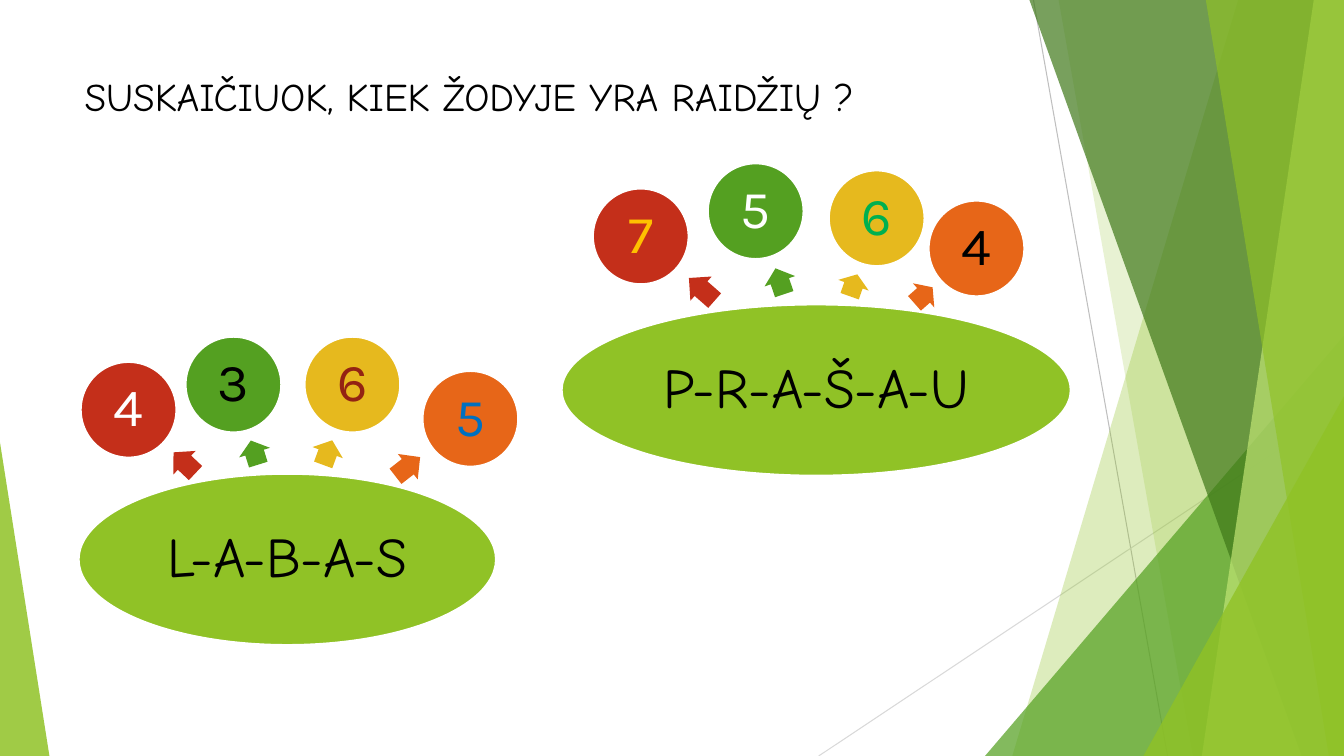
from lxml import etree
from pptx import Presentation
from pptx.dml.color import RGBColor
from pptx.enum import shapes, text
from pptx.oxml.ns import qn
from pptx.util import Inches, Pt

THEME = {
    "lime": "90C226", "green": "54A021", "dark": "3F7819", "pale": "C0E474",
    "yellow": "E6B91E", "orange": "E76618", "red": "C42F1A",
    "white": "FFFFFF", "black": "000000", "gold": "FFC000", "emerald": "00B050",
    "maroon": "932313", "blue": "0070C0", "gray": "BFBFBF", "silver": "D9D9D9",
    "title": 28, "word": 40, "number": 38,
    "hand": "Comic Neue", "digit": "Karla",
}
W, H = 13.33, 7.5


def paint(sp, color, opacity=100, outlined=False):
    sp.shadow.inherit = False
    sp.fill.solid()
    sp.fill.fore_color.rgb = RGBColor.from_string(THEME[color])
    if opacity < 100:
        clr = sp.fill._xPr.find(qn("a:solidFill"))[0]
        etree.SubElement(clr, qn("a:alpha"), val=str(opacity * 1000))
    if outlined:
        sp.line.color.rgb = RGBColor.from_string(THEME["white"])
        sp.line.width = Pt(1.5)
    else:
        sp.line.fill.background()


def write(sp, words, size, font, color, inset):
    tf = sp.text_frame
    tf.word_wrap = True
    tf.vertical_anchor = text.MSO_ANCHOR.MIDDLE
    tf.margin_left = tf.margin_right = tf.margin_top = tf.margin_bottom = Inches(inset)
    tf.text = words
    p = tf.paragraphs[0]
    p.alignment = text.PP_ALIGN.CENTER
    p.line_spacing = 0.9
    r = p.runs[0]
    r.font.size = Pt(THEME[size])
    r.font.name = THEME[font]
    r.font.color.rgb = RGBColor.from_string(THEME[color])


prs = Presentation()
prs.slide_width, prs.slide_height = Inches(W), Inches(H)
s = prs.slides.add_slide(prs.slide_layouts[6])

# Backdrop: thin lines
backdrop = s.shapes.add_group_shape().shapes
for x1, y1, x2, y2, color in [(10.25, 0, 11.58, H, "gray"), (W, 4.03, 8.12, H, "silver")]:
    line = backdrop.add_connector(shapes.MSO_CONNECTOR.STRAIGHT,
                                  Inches(x1), Inches(y1), Inches(x2), Inches(y2))
    line.line.color.rgb = RGBColor.from_string(THEME[color])
    line.line.width = Pt(0.75)
    etree.SubElement(line._element.spPr, qn("a:effectLst"))

# Backdrop: bands (top x, bottom x) run to the right edge,
# triangles (left, top, width, apex) stand on the bottom edge
facets = [
    ((12.28, 10.04), "lime", 30),
    ((10.5, 11.83), "lime", 20),
    ((9.77, 3.33, 3.56, 1), "green", 72),
    ((10.21, 12.91), "dark", 70),
    ((13.03, 11.92), "pale", 70),
    ((11.96, 13.18), "lime", 65),
    ((11.34, 3.93, 1.99, 1), "lime", 80),
    ((0, 4.39, 0.49, 0), "lime", 85),
]
for geometry, color, opacity in facets:
    if len(geometry) == 2:
        top_x, bottom_x = geometry
        outline = backdrop.build_freeform(Inches(top_x), Inches(0))
        corners = [(W, 0), (W, H), (bottom_x, H)]
        outline.add_line_segments([(Inches(x), Inches(y)) for x, y in corners])
        sp = outline.convert_to_shape()
    else:
        left, top, width, apex = geometry
        sp = backdrop.add_shape(shapes.MSO_SHAPE.ISOSCELES_TRIANGLE, Inches(left), Inches(top),
                                Inches(width), Inches(H - top))
        sp.adjustments[0] = apex
    paint(sp, color, opacity)

# Title
title = s.shapes.add_textbox(Inches(0.74), Inches(0.67), Inches(9.4), Inches(0.61))
tf = title.text_frame
tf.word_wrap = True
tf.text = "SUSKAIČIUOK, KIEK ŽODYJE YRA RAIDŽIŲ ?"
r = tf.paragraphs[0].runs[0]
r.font.size = Pt(THEME["title"])
r.font.name = THEME["hand"]
r.font.color.rgb = RGBColor.from_string(THEME["black"])

# Words with their answers:
# number, its colour, circle left and top, arrow left, top, width and rotation
BALL, ARROW_H, WORD_H = 0.95, 0.32, 1.7
ball_colors = ["green", "yellow", "orange", "red"]
words = [
    ("P-R-A-Š-A-U", 5.57, 3.02, 5.05, [
        ("5", "white", 7.02, 1.62, 7.6, 2.63, 0.27, 251.3),
        ("6", "emerald", 8.22, 1.69, 8.35, 2.67, 0.23, 289.5),
        ("4", "black", 9.21, 1.99, 9.04, 2.77, 0.24, 318.5),
        ("7", "gold", 5.88, 1.87, 6.79, 2.71, 0.34, 221.3)]),
    ("L-A-B-A-S", 0.78, 4.7, 4.14, [
        ("3", "black", 1.84, 3.34, 2.4, 4.33, 0.25, 252.7),
        ("6", "maroon", 3.02, 3.34, 3.12, 4.33, 0.26, 290.2),
        ("5", "blue", 4.19, 3.68, 3.89, 4.47, 0.31, 322.1),
        ("4", "white", 0.8, 3.59, 1.68, 4.43, 0.3, 223.3)]),
]
for word, left, top, width, answers in words:
    group = s.shapes.add_group_shape().shapes
    sp = group.add_shape(shapes.MSO_SHAPE.OVAL, Inches(left), Inches(top),
                         Inches(width), Inches(WORD_H))
    paint(sp, "lime", outlined=True)
    write(sp, word, "word", "hand", "black", 0.06)
    for color, answer in zip(ball_colors, answers):
        number, ink, ball_x, ball_y, arrow_x, arrow_y, arrow_w, angle = answer
        arrow = group.add_shape(shapes.MSO_SHAPE.RIGHT_ARROW, Inches(arrow_x), Inches(arrow_y),
                                Inches(arrow_w), Inches(ARROW_H))
        arrow.adjustments[0], arrow.adjustments[1] = 0.6, 0.5
        arrow.rotation = angle
        paint(arrow, color)
        ball = group.add_shape(shapes.MSO_SHAPE.OVAL, Inches(ball_x), Inches(ball_y),
                               Inches(BALL), Inches(BALL))
        paint(ball, color, outlined=True)
        write(ball, number, "number", "digit", ink, 0.05)

prs.save("out.pptx")
